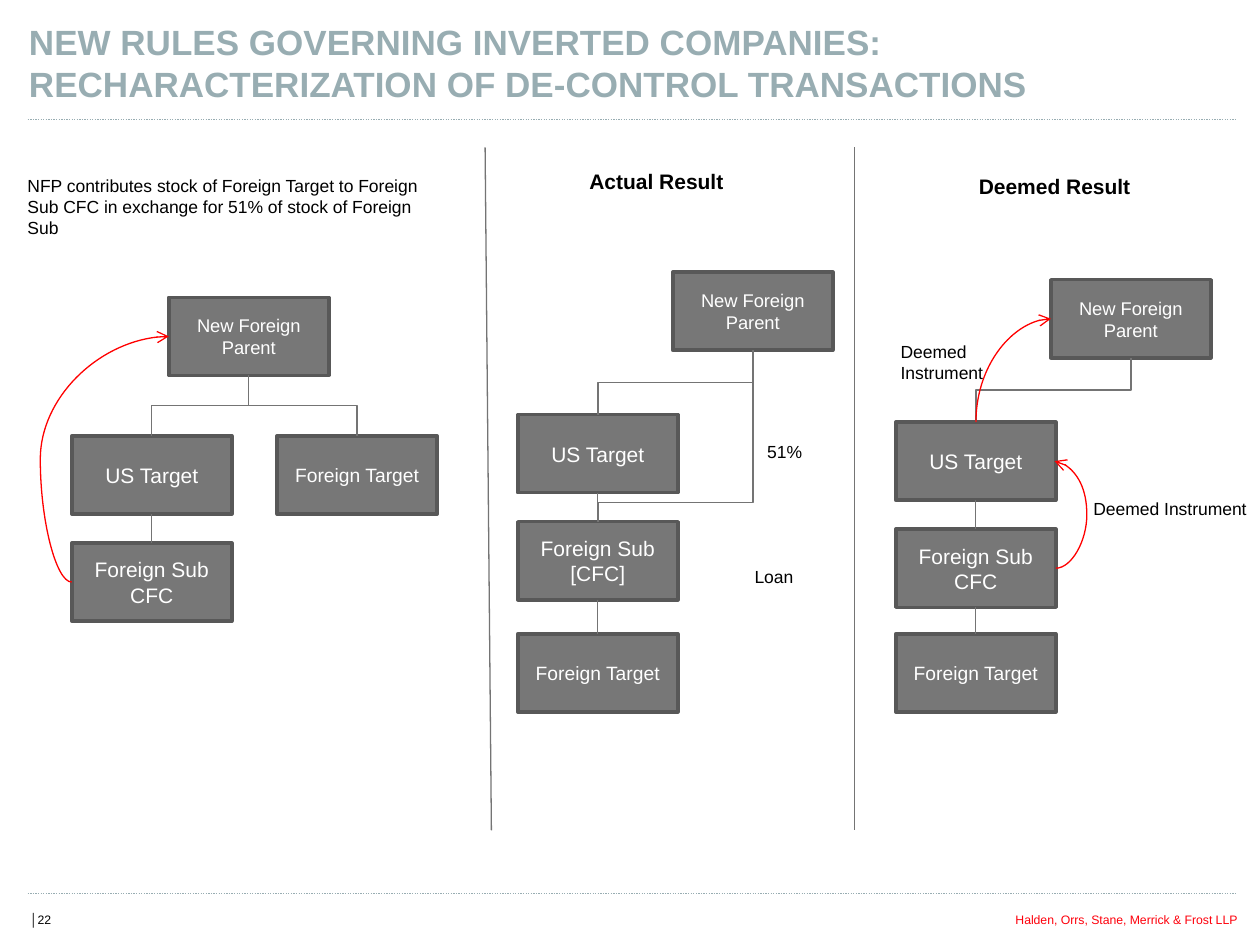
from lxml import etree
from pptx import Presentation
from pptx.dml.color import RGBColor
from pptx.enum.dml import MSO_LINE
from pptx.enum.shapes import MSO_CONNECTOR, MSO_SHAPE
from pptx.enum.text import MSO_ANCHOR, MSO_AUTO_SIZE, PP_ALIGN
from pptx.oxml.ns import qn
from pptx.util import Inches, Pt

STRAIGHT, ELBOW, CURVE = MSO_CONNECTOR.STRAIGHT, MSO_CONNECTOR.ELBOW, MSO_CONNECTOR.CURVE
LEFT, CENTER, RIGHT = PP_ALIGN.LEFT, PP_ALIGN.CENTER, PP_ALIGN.RIGHT
MIDDLE = MSO_ANCHOR.MIDDLE
TOP_SIDE, LEFT_SIDE, BOTTOM_SIDE, RIGHT_SIDE = range(4)
GREY, RED, BLACK, SLATE = "747474", "FF0000", "000000", "98ADB2"
BOX_WIDTH, BOX_HEIGHT = 1.27, 0.62
MINIMUM_SPAN = 0.01


def color(value):
    """Turn a hex string into a colour."""
    return RGBColor.from_string(value)


def format_text(text_frame, text, size, fill, align=LEFT, bold=False):
    """Write the text and give all its paragraphs one style."""
    text_frame.text = text
    for paragraph in text_frame.paragraphs:
        paragraph.alignment = align
        paragraph.font.name = "Arial"
        paragraph.font.size = Pt(size)
        paragraph.font.bold = bold
        paragraph.font.color.rgb = color(fill)


def add_label(slide, box, text, size=10, fill=BLACK, align=LEFT, bold=False, wrap=True):
    """Add a text box at (left, top, width, height) in inches."""
    text_frame = slide.shapes.add_textbox(*map(Inches, box)).text_frame
    text_frame.word_wrap = wrap
    text_frame.auto_size = MSO_AUTO_SIZE.SHAPE_TO_FIT_TEXT
    format_text(text_frame, text, size, fill, align, bold)


def add_entity(slide, left, top, name, size=12):
    """Add one company box."""
    shape = slide.shapes.add_shape(
        MSO_SHAPE.RECTANGLE, Inches(left), Inches(top), Inches(BOX_WIDTH), Inches(BOX_HEIGHT))
    shape.shadow.inherit = False
    shape.fill.solid()
    shape.fill.fore_color.rgb = color("777777")
    shape.line.color.rgb = color("585858")
    shape.line.width = Pt(2)
    shape.text_frame.word_wrap = True
    shape.text_frame.vertical_anchor = MIDDLE
    format_text(shape.text_frame, name, size, "FFFFFF", CENTER)
    return shape


def add_line(slide, start=(0, 0), end=(0, 0), fill=GREY, kind=STRAIGHT):
    """Add a thin line without a shadow between two points in inches."""
    line = slide.shapes.add_connector(kind, *map(Inches, (*start, *end)))
    line.line.color.rgb = color(fill)
    line.line.width = Pt(0.75)
    etree.SubElement(line._element.spPr, qn("a:effectLst"))
    return line


def turn_upright(connector):
    """Rotate a bent connector by a quarter so that it leaves vertically."""
    start_x, start_y = connector.begin_x, connector.begin_y
    end_x, end_y = connector.end_x, connector.end_y
    middle_x, middle_y = (start_x + end_x) // 2, (start_y + end_y) // 2
    half_x, half_y = (end_y - start_y) // 2, (start_x - end_x) // 2
    connector.begin_x, connector.begin_y = middle_x - half_x, middle_y - half_y
    connector.end_x, connector.end_y = middle_x + half_x, middle_y + half_y
    connector._element.spPr.find(qn("a:xfrm")).set("rot", "5400000")


def set_bend(connector, reach):
    """Put the bend at a signed reach in inches from the start."""
    if connector.begin_x == connector.end_x:
        connector.end_x = connector.begin_x - Inches(MINIMUM_SPAN)
    share = Inches(reach) / (connector.end_x - connector.begin_x)
    guides = connector._element.spPr.find(qn("a:prstGeom")).get_or_add_avLst()
    etree.SubElement(guides, qn("a:gd"), name="adj1", fmla=f"val {round(share * 100000)}")


def link(slide, source, source_side, target, target_side, kind=STRAIGHT, reach=None):
    """Join two boxes with a connector; curves are red arrows."""
    connector = add_line(slide, fill=RED if kind == CURVE else GREY, kind=kind)
    connector.begin_connect(source, source_side)
    connector.end_connect(target, target_side)
    if kind != STRAIGHT and source_side in (TOP_SIDE, BOTTOM_SIDE):
        turn_upright(connector)
    if reach is not None:
        set_bend(connector, reach)
    if kind == CURVE:
        etree.SubElement(connector.line._get_or_add_ln(), qn("a:tailEnd"), type="arrow")
    return connector


def add_frame(slide, width, height):
    """Add the title, rules, column dividers and footer."""
    title = slide.shapes.title
    title.left, title.top, title.width, title.height = map(Inches, (0.13, 0.13, 8.51, 0.73))
    title.text_frame.vertical_anchor = MIDDLE
    title.text_frame.word_wrap = True
    format_text(title.text_frame,
                "NEW RULES GOVERNING INVERTED COMPANIES:\v"
                "RECHARACTERIZATION OF DE-CONTROL TRANSACTIONS", 20, SLATE, bold=True)
    for top in (0.95, 7.09):
        rule = add_line(slide, (0.22, top), (width - 0.18, top), SLATE)
        rule.line.dash_style = MSO_LINE.ROUND_DOT
    for top_x, bottom_x in ((3.85, 3.9), (6.78, 6.78)):
        add_line(slide, (top_x, 1.17), (bottom_x, 6.59))
    footer_top = height - 0.31
    add_label(slide, (0.14, footer_top, 5.13, 0.22), "│22", 7)
    add_label(slide, (6.59, footer_top, 3.33, 0.22),
              "Halden, Orrs, Stane, Merrick & Frost LLP", 7, "FE000C", RIGHT)


def add_contribution(slide, left, top):
    """Draw the starting structure and the contribution."""
    add_label(slide, (left - 0.45, top - 1.02, 3.34, 0.61),
              "NFP contributes stock of Foreign Target to Foreign Sub CFC "
              "in exchange for 51% of stock of Foreign Sub")
    parent = add_entity(slide, left + 0.77, top, "New Foreign Parent", 10.5)
    us_target = add_entity(slide, left, top + 1.1, "US Target")
    foreign_target = add_entity(slide, left + 1.63, top + 1.1, "Foreign Target", 11)
    foreign_sub = add_entity(slide, left, top + 1.95, "Foreign Sub\nCFC")
    for child in (us_target, foreign_target):
        link(slide, parent, BOTTOM_SIDE, child, TOP_SIDE, ELBOW)
    link(slide, us_target, BOTTOM_SIDE, foreign_sub, TOP_SIDE)
    link(slide, foreign_sub, LEFT_SIDE, parent, LEFT_SIDE, CURVE, -0.25)


def add_chain(slide, left, top, sub_name):
    """Draw the parent above a chain of three companies and return the first three."""
    parent = add_entity(slide, left + 1.23, top, "New Foreign Parent", 10.5)
    us_target = add_entity(slide, left, top + 1.13, "US Target")
    foreign_sub = add_entity(slide, left, top + 1.98, sub_name)
    foreign_target = add_entity(slide, left, 5.03, "Foreign Target", 11)
    link(slide, parent, BOTTOM_SIDE, us_target, TOP_SIDE, ELBOW)
    link(slide, us_target, BOTTOM_SIDE, foreign_sub, TOP_SIDE)
    link(slide, foreign_sub, BOTTOM_SIDE, foreign_target, TOP_SIDE)
    return parent, us_target, foreign_sub


def add_actual_result(slide, left, top):
    """Draw the actual result."""
    add_label(slide, (left + 0.04, 1.29, 2.12, 0.3), "Actual Result", 12, align=CENTER, bold=True)
    parent, _, foreign_sub = add_chain(slide, left, top, "Foreign Sub [CFC]")
    link(slide, parent, BOTTOM_SIDE, foreign_sub, TOP_SIDE, ELBOW, 1.21)
    add_label(slide, (left + 1.88, top + 1.29, 0.48, 0.27), "51%", wrap=False)
    add_label(slide, (left + 1.78, top + 2.28, 0.51, 0.27), "Loan", wrap=False)


def add_deemed_result(slide, left, top):
    """Draw the deemed result with its two deemed instruments."""
    add_label(slide, (left + 0.2, 1.33, 2.12, 0.3), "Deemed Result", 12, align=CENTER, bold=True)
    parent, us_target, foreign_sub = add_chain(slide, left, top, "Foreign Sub CFC")
    link(slide, foreign_sub, RIGHT_SIDE, us_target, RIGHT_SIDE, CURVE, 0.25)
    quarter = link(slide, us_target, TOP_SIDE, parent, LEFT_SIDE, CURVE)
    quarter._element.spPr.find(qn("a:prstGeom")).set("prst", "curvedConnector2")
    add_label(slide, (left + 1.47, top + 1.68, 1.43, 0.27), "Deemed Instrument", wrap=False)
    add_label(slide, (left - 0.06, top + 0.44, 0.86, 0.44), "Deemed\nInstrument", wrap=False)


def main():
    """Build the slide and save it."""
    presentation = Presentation()
    presentation.slide_width, presentation.slide_height = Inches(10), Inches(7.5)
    slide = presentation.slides.add_slide(presentation.slide_layouts[5])
    add_frame(slide, 10, 7.5)
    add_contribution(slide, 0.57, 2.36)
    add_actual_result(slide, 4.11, 2.16)
    add_deemed_result(slide, 7.11, 2.22)
    presentation.save("out.pptx")


if __name__ == "__main__":
    main()
